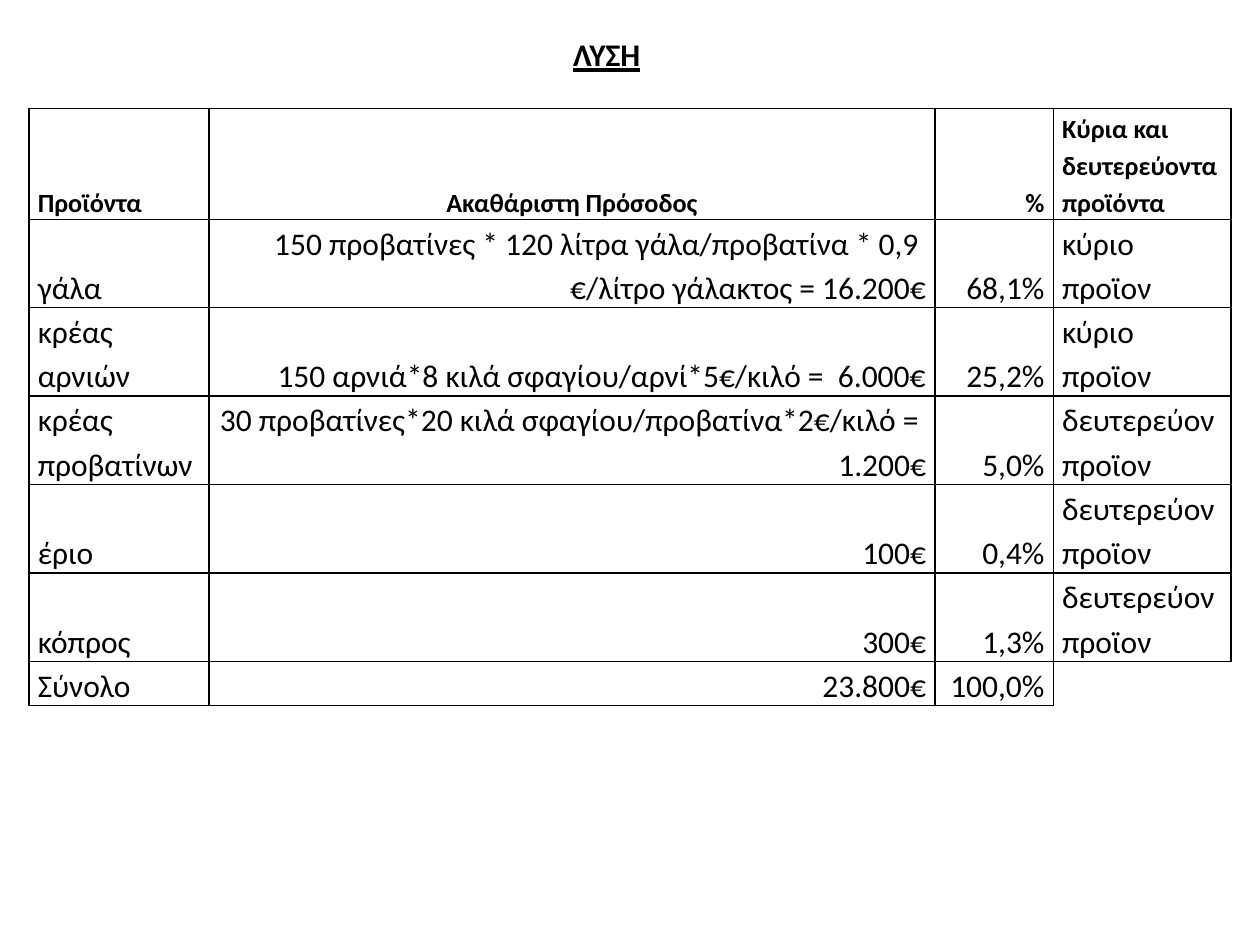
from dataclasses import dataclass

from lxml import etree
from pptx import Presentation
from pptx.dml.color import RGBColor
from pptx.enum.text import MSO_ANCHOR, PP_ALIGN
from pptx.oxml.ns import qn
from pptx.util import Inches, Pt

LEFT, CENTER, RIGHT = PP_ALIGN.LEFT, PP_ALIGN.CENTER, PP_ALIGN.RIGHT
TOP, BOTTOM = MSO_ANCHOR.TOP, MSO_ANCHOR.BOTTOM


@dataclass(frozen=True)
class Theme:
    font: str = "Calibri"
    ink: str = "000000"
    title_size: int = 18
    header_size: int = 15
    body_size: int = 18
    line_spacing: float = 1.15
    border_width: int = 1


THEME = Theme()
COLUMN_WIDTHS = (1.43, 5.76, 0.94, 1.41)
ROW_HEIGHTS = (0.86, *[0.69] * 5, 0.34)
HEADER_ALIGNMENTS = (LEFT, CENTER, RIGHT, LEFT)
BODY_ALIGNMENTS = (LEFT, RIGHT, RIGHT, LEFT)
MAIN_PRODUCT = "κύριο προϊον"
SECONDARY_PRODUCT = "δευτερεύον προϊον"
ROWS = (
    ("Προϊόντα", "Ακαθάριστη Πρόσοδος", "%", "Κύρια και δευτερεύοντα προϊόντα"),
    ("γάλα", "150 προβατίνες * 120 λίτρα γάλα/προβατίνα * 0,9  €/λίτρο γάλακτος = 16.200€",
     "68,1%", MAIN_PRODUCT),
    ("κρέας αρνιών", "150 αρνιά*8 κιλά σφαγίου/αρνί*5€/κιλό =  6.000€",
     "25,2%", MAIN_PRODUCT),
    ("κρέας προβατίνων", "30 προβατίνες*20 κιλά σφαγίου/προβατίνα*2€/κιλό =   1.200€",
     "5,0%", SECONDARY_PRODUCT),
    ("έριο", "100€", "0,4%", SECONDARY_PRODUCT),
    ("κόπρος", "300€", "1,3%", SECONDARY_PRODUCT),
    ("Σύνολο", "23.800€", "100,0%", ""),
)


def set_values(target, values):
    for name, value in values.items():
        setattr(target, name, value)


def write_text(para, text, size, **font_values):
    span = para.add_run()
    span.text = text
    set_values(span.font, {"name": THEME.font, "size": Pt(size), **font_values})
    span.font.color.rgb = RGBColor.from_string(THEME.ink)


def set_borders(cell, visible_sides):
    """Draw the given sides (letters of LRTB) and hide the others."""
    properties = cell._tc.get_or_add_tcPr()
    for side in "LRTB":
        line = etree.SubElement(properties, qn(f"a:ln{side}"), w=str(Pt(THEME.border_width)))
        if side in visible_sides:
            fill = etree.SubElement(line, qn("a:solidFill"))
            etree.SubElement(fill, qn("a:srgbClr"), val=THEME.ink)
        else:
            etree.SubElement(line, qn("a:noFill"))


def fill_cell(cell, text, alignment, is_header):
    set_borders(cell, "LRTB" if text else "LT")
    cell.fill.background()
    set_values(cell, {
        "margin_left": Inches(0.07), "margin_right": Inches(0.07),
        "margin_top": 0, "margin_bottom": 0, "vertical_anchor": BOTTOM,
    })
    if text:
        para = cell.text_frame.paragraphs[0]
        set_values(para, {"alignment": alignment, "line_spacing": THEME.line_spacing})
        size = THEME.header_size if is_header else THEME.body_size
        write_text(para, text, size, bold=is_header)


def add_income_table(page):
    table = page.shapes.add_table(
        len(ROWS), len(COLUMN_WIDTHS), Inches(0.23), Inches(0.86),
        Inches(sum(COLUMN_WIDTHS)), Inches(sum(ROW_HEIGHTS))).table
    set_values(table, {"first_row": False, "horz_banding": False})
    for column, width in zip(table.columns, COLUMN_WIDTHS):
        column.width = Inches(width)
    for index, (row, height) in enumerate(zip(table.rows, ROW_HEIGHTS)):
        row.height = Inches(height)
        is_header = index == 0
        alignments = HEADER_ALIGNMENTS if is_header else BODY_ALIGNMENTS
        for cell, text, alignment in zip(row.cells, ROWS[index], alignments):
            fill_cell(cell, text, alignment, is_header)


def add_title(page, text):
    box = page.shapes.add_textbox(Inches(4.45), Inches(0.23), Inches(0.74), Inches(0.71))
    set_values(box.text_frame, {"word_wrap": False, "vertical_anchor": TOP})
    write_text(box.text_frame.paragraphs[0], text, THEME.title_size, bold=True, underline=True)


def main():
    deck = Presentation()
    set_values(deck, {"slide_width": Inches(10), "slide_height": Inches(7.5)})
    page = deck.slides.add_slide(deck.slide_layouts[6])
    add_income_table(page)
    add_title(page, "ΛΥΣΗ")
    deck.save("out.pptx")


if __name__ == "__main__":
    main()
